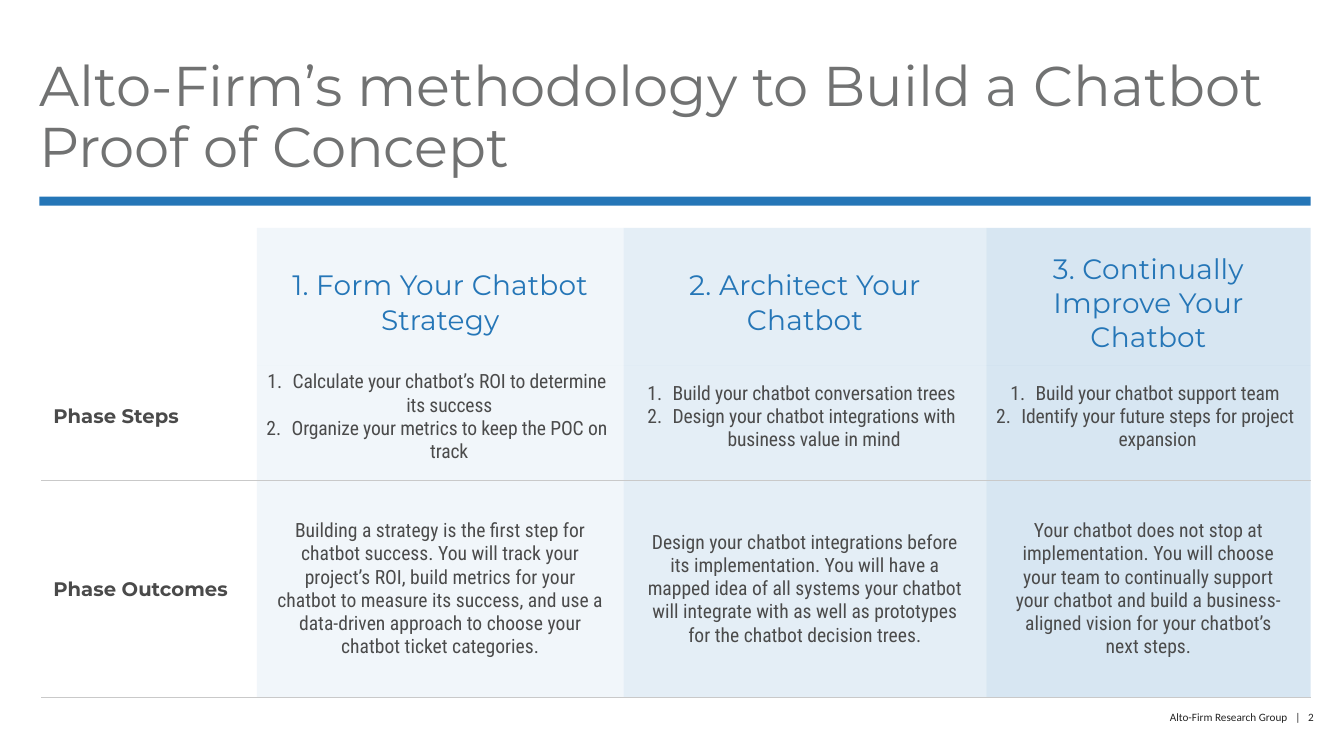
"""Build the slide on the phases of a chatbot proof of concept."""
import pptx
import pptx.dml.color
import pptx.enum.shapes
import pptx.enum.text
import pptx.oxml
import pptx.oxml.ns
import pptx.util

WIDE, HIGH = 13.34, 7.5
HEAD, BODY, SMALL = "Montserrat", "Roboto Condensed", "Calibri"
BLUE, TINT, GREY, RULE = "2576B7", "7CADD4", "4B4B4B", "C9C9C9"
NO_GRID = "{2D5ABB26-0587-4C30-8999-92F81FD0307C}"

TITLE = "Alto-Firm’s methodology to Build a Chatbot Proof of Concept"
FOOT = [("Alto-Firm Research Group", 0), (" ", 3.6), ("|", 0), (" ", 3.6), ("2", 0)]
LABELS = ["", "Phase Steps", "Phase Outcomes"]
PHASES = [
    ("1. Form Your Chatbot Strategy",
     ["Calculate your chatbot’s ROI to determine its success",
      "Organize your metrics to keep the POC on track"],
     "Building a strategy is the first step for chatbot success. You will track "
     "your project’s ROI, build metrics for your chatbot to measure its success, "
     "and use a data-driven approach to choose your chatbot ticket categories."),
    ("2. Architect Your Chatbot",
     ["Build your chatbot conversation trees",
      "Design your chatbot integrations with business value in mind"],
     "Design your chatbot integrations before its implementation. You will have a "
     "mapped idea of all systems your chatbot will integrate with as well as "
     "prototypes for the chatbot decision trees."),
    ("3. Continually Improve Your Chatbot",
     ["Build your chatbot support team",
      "Identify your future steps for project expansion"],
     "Your chatbot does not stop at implementation. You will choose your team to "
     "continually support your chatbot and build a business-aligned vision for "
     "your chatbot’s next steps."),
]
COLS = [2.14, 3.64, 3.6, 3.22]
ROWS = [1.37, 1.13, 2.16]
PADS = [(0.12, 0.24, 0.12, 0.12), (0.05, 0.04, 0.12, 0.16), (0.2,) * 4]
SIDES = [(0.12,) * 4, (0.12, 0.04, 0, 0.16), (0.12,) * 4]
STYLES = [(HEAD, 20, BLUE, 0.1), (BODY, 14, GREY, -0.1), (BODY, 14, GREY, 0)]
LEFT, SPAN = 0.39, 12.62

ALIGN = pptx.enum.text.PP_ALIGN
ANCHOR = pptx.enum.text.MSO_ANCHOR
inch = pptx.util.Inches


def paint(color, code):
    color.rgb = pptx.dml.color.RGBColor.from_string(code)


def node(tag, inner="", attrs=""):
    space = pptx.oxml.ns.nsdecls("a")
    return pptx.oxml.parse_xml(f"<a:{tag} {space} {attrs}>{inner}</a:{tag}>")


def write(para, text, font, size, code, gap=0, bold=False):
    run = para.add_run()
    run.text = text
    run.font.name, run.font.size, run.font.bold = font, pptx.util.Pt(size), bold
    paint(run.font.color, code)
    if gap:
        run.font._element.set("spc", str(round(gap * 100)))


def box(slide, *place):
    frame = slide.shapes.add_textbox(*map(inch, place)).text_frame
    frame.word_wrap = True
    frame.margin_left = frame.margin_right = 0
    frame.margin_top = frame.margin_bottom = 0
    return frame


def pad(cell, sizes):
    (cell.margin_left, cell.margin_top,
     cell.margin_right, cell.margin_bottom) = map(inch, sizes)
    cell.vertical_anchor = ANCHOR.MIDDLE


def number(para):
    props = para._p.get_or_add_pPr()
    props.set("marL", str(inch(0.25)))
    props.set("indent", str(inch(-0.25)))
    props.append(node("buAutoNum", attrs='type="arabicPeriod"'))


def shade(cell, share):
    cell.fill.solid()
    paint(cell.fill.fore_color, TINT)
    color = cell._tc.tcPr.find(".//" + pptx.oxml.ns.qn("a:srgbClr"))
    color.append(node("alpha", attrs=f'val="{share * 1000}"'))


def edge(cell, tag):
    fill = f'<a:solidFill><a:srgbClr val="{RULE}"/></a:solidFill>'
    line = node(tag, fill, f'w="{pptx.util.Pt(1)}"')
    cell._tc.get_or_add_tcPr().insert(0, line)


def grid(slide):
    frame = slide.shapes.add_table(
        len(ROWS), len(COLS), inch(0.41), inch(2.26),
        inch(sum(COLS)), inch(sum(ROWS)))
    table = frame.table
    table.first_row = table.horz_banding = False
    table._tbl.tblPr.find(pptx.oxml.ns.qn("a:tableStyleId")).text = NO_GRID
    for part, size in zip([*table.columns], COLS):
        part.width = inch(size)
    for part, size in zip([*table.rows], ROWS):
        part.height = inch(size)
    for row, label in enumerate(LABELS):
        cell = table.cell(row, 0)
        cell.fill.background()
        pad(cell, SIDES[row])
        if label:
            write(cell.text_frame.paragraphs[0], label, HEAD, 14, "4A4A4A", bold=True)
        for col, phase in enumerate(PHASES, 1):
            cell = table.cell(row, col)
            pad(cell, PADS[row])
            shade(cell, col * 10)
            steps = isinstance(phase[row], list)
            for spot, text in enumerate(phase[row] if steps else [phase[row]]):
                body = cell.text_frame
                para = body.add_paragraph() if spot else body.paragraphs[0]
                para.alignment = ALIGN.CENTER
                if steps:
                    number(para)
                write(para, text, *STYLES[row])
        for col in range(len(COLS)):
            if row:
                edge(table.cell(row, col), "lnB")
            if row == 2:
                edge(table.cell(row, col), "lnT")


def main():
    deck = pptx.Presentation()
    deck.slide_width, deck.slide_height = inch(WIDE), inch(HIGH)
    slide = deck.slides.add_slide(deck.slide_layouts[6])
    foot = box(slide, 9.28, 7.05, 3.76, 0.13).paragraphs[0]
    foot.alignment = ALIGN.RIGHT
    foot.space_before = pptx.util.Pt(0.6)
    for text, gap in FOOT:
        write(foot, text, SMALL, 8, "242424", gap)
    title = box(slide, LEFT, 0.58, SPAN, 1.24).paragraphs[0]
    title.line_spacing = 0.9
    write(title, TITLE, HEAD, 40, "717272")
    bar = slide.shapes.add_shape(
        pptx.enum.shapes.MSO_SHAPE.RECTANGLE,
        *map(inch, (LEFT, 1.95, SPAN, 0.09)))
    bar.shadow.inherit = False
    bar.fill.solid()
    paint(bar.fill.fore_color, BLUE)
    bar.line.fill.background()
    grid(slide)
    deck.save("out.pptx")


if __name__ == "__main__":
    main()
